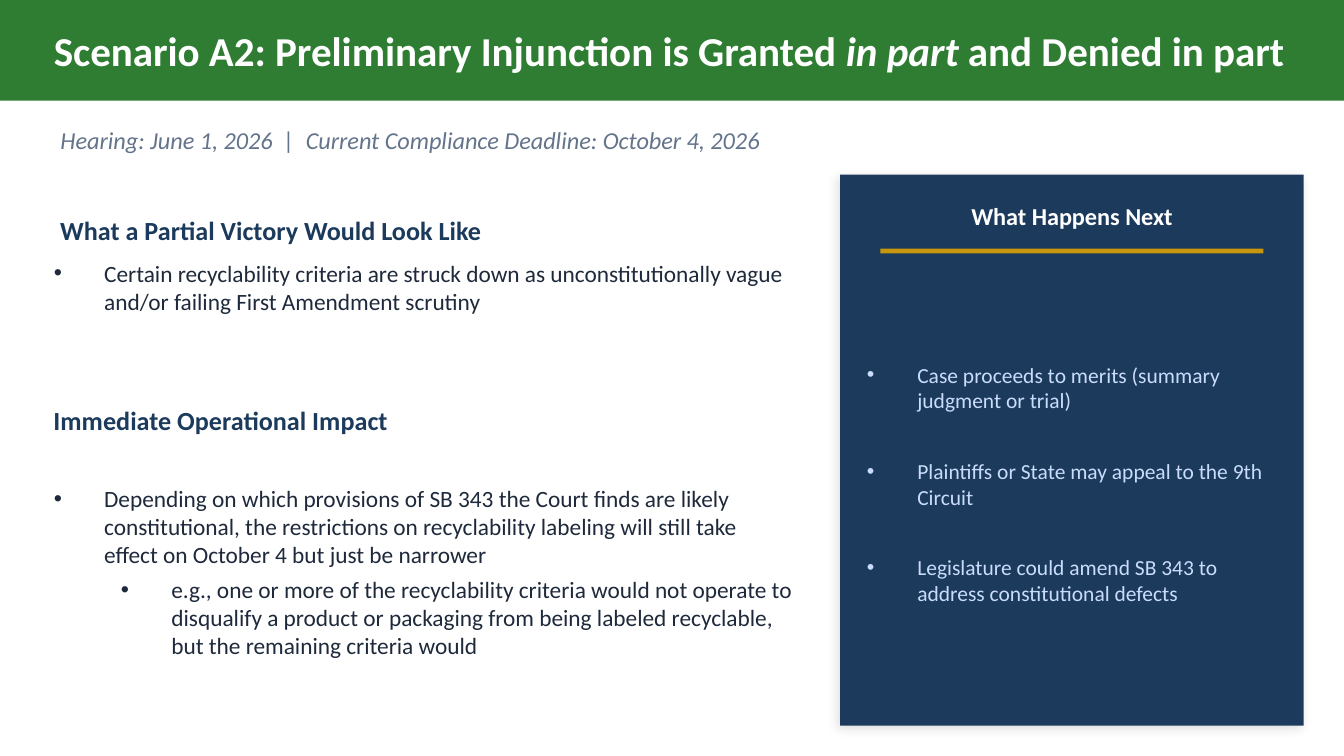
from typing import NamedTuple

from lxml.etree import SubElement
from pptx import Presentation
from pptx.dml.color import RGBColor
from pptx.enum.shapes import MSO_SHAPE
from pptx.enum.text import MSO_ANCHOR, MSO_AUTO_SIZE, PP_ALIGN
from pptx.oxml import parse_xml
from pptx.oxml.ns import nsdecls, qn
from pptx.util import Inches, Pt

CELL = 0.05  # inches; the slide is 200 columns wide
COLUMNS, ROWS = 200, 112.5
HANG = 7.5  # hanging indent of a bullet
SUB_INDENT = 10  # extra indent of each list level


class Theme:
    font = "Calibri"
    green, navy, gold = "2E7D32", "1B3A5C", "C8960C"
    styles = {
        "title": ("FFFFFF", {"size": Pt(22), "bold": True}),
        "dates": ("64748B", {"size": Pt(13), "bold": False, "italic": True}),
        "heading": (navy, {"size": Pt(14), "bold": True}),
        "body": ("1E293B", {"size": Pt(12.5), "bold": False}),
        "panel heading": ("FFFFFF", {"size": Pt(13), "bold": True}),
        "panel body": ("CADCFC", {"size": Pt(11.5), "bold": False}),
    }


class Box(NamedTuple):
    """An area in grid cells."""
    left: float
    top: float
    width: float
    height: float

    def inner(self, left, top, width, height):
        return Box(self.left + left, self.top + top, width, height)

    def emu(self):
        return [Inches(cells * CELL) for cells in self]


def set_all(target, values):
    for name, value in values.items():
        setattr(target, name, value)


def style_font(font, style):
    color, values = Theme.styles[style]
    set_all(font, {"name": Theme.font, **values})
    font.color.rgb = RGBColor.from_string(color)


def bar(slide, box, color):
    shape = slide.shapes.add_shape(MSO_SHAPE.RECTANGLE, *box.emu())
    shape.shadow.inherit = False
    shape.fill.solid()
    shape.fill.fore_color.rgb = RGBColor.from_string(color)
    shape.line.fill.background()
    return shape


def prepare_frame(shape):
    set_all(shape.text_frame, {
        "word_wrap": True, "auto_size": MSO_AUTO_SIZE.NONE,
        "vertical_anchor": MSO_ANCHOR.MIDDLE,
        "margin_left": Inches(0.1), "margin_right": Inches(0.1),
        "margin_top": Inches(0.05), "margin_bottom": Inches(0.05),
    })
    return shape.text_frame


def place(slide, index, box):
    """Move a placeholder to the box and in front of what is already drawn."""
    holder = slide.placeholders[index]
    set_all(holder, dict(zip(("left", "top", "width", "height"), box.emu())))
    holder.element.getparent().append(holder.element)
    return prepare_frame(holder)


def write_line(frame, runs, style, align=PP_ALIGN.LEFT):
    """Fill one paragraph from (text, italic) runs; None keeps the style."""
    line = frame.paragraphs[0]
    set_all(line, {"alignment": align, "space_before": Pt(0), "line_spacing": 1.0})
    for text, italic in runs:
        run = line.add_run()
        run.text = text
        style_font(run.font, style)
        if italic is not None:
            run.font.italic = italic


def label(slide, box, text, style, align=PP_ALIGN.LEFT):
    frame = prepare_frame(slide.shapes.add_textbox(*box.emu()))
    write_line(frame, [(text, None)], style, align)


def bullets(frame, items, style, gap):
    for number, (level, text) in enumerate(items):
        item = frame.paragraphs[0] if number == 0 else frame.add_paragraph()
        set_all(item, {"level": level, "alignment": PP_ALIGN.LEFT, "line_spacing": 1.0,
                       "space_before": Pt(0), "space_after": Pt(gap)})
        properties = item._p.get_or_add_pPr()
        properties.set("marL", str(Inches((HANG + SUB_INDENT * level) * CELL)))
        properties.set("indent", str(-Inches(HANG * CELL)))
        SubElement(properties, qn("a:buChar")).set("char", "•")
        run = item.add_run()
        run.text = text
        style_font(run.font, style)


def banner(slide, box, runs):
    bar(slide, box, Theme.green)
    write_line(place(slide, 0, box.inner(6, 0, box.width - 12, box.height)), runs, "title")


def section(slide, box, heading, items, index, heading_indent, list_top):
    """Heading over a list; returns the frame of the list."""
    label(slide, box.inner(heading_indent, 0, box.width, 7), heading, "heading")
    frame = place(slide, index, box.inner(0, list_top, box.width, box.height - list_top))
    bullets(frame, items, "body", gap=4)
    return frame


def panel(slide, box, heading, items, index):
    card = bar(slide, box, Theme.navy)
    properties = card.element.spPr
    properties.remove(properties.find(qn("a:effectLst")))
    properties.append(parse_xml(
        f'<a:effectLst {nsdecls("a")}><a:outerShdw blurRad="{Pt(6)}" dist="{Pt(2)}" '
        'dir="8100000" algn="bl" rotWithShape="0"><a:srgbClr val="000000">'
        '<a:alpha val="12000"/></a:srgbClr></a:outerShdw></a:effectLst>'))
    text_width = box.width - 4
    label(slide, box.inner(2, 1.6, text_width, 9), heading, "panel heading", PP_ALIGN.CENTER)
    bar(slide, box.inner(6, 11, box.width - 12, 0.7), Theme.gold)
    frame = place(slide, index, box.inner(2, 13, text_width, box.height - 16))
    bullets(frame, items, "panel body", gap=24)


def main():
    deck = Presentation()
    deck.slide_width, deck.slide_height = Inches(COLUMNS * CELL), Inches(ROWS * CELL)
    slide = deck.slides.add_slide(deck.slide_layouts.get_by_name("Comparison"))

    banner(slide, Box(0, 0, COLUMNS, 15), [
        ("Scenario A2: Preliminary Injunction is Granted ", False),
        ("in part ", True),
        ("and Denied in part", False),
    ])
    dates = place(slide, 1, Box(7, 17, COLUMNS - 14, 7.6))
    write_line(dates, [
        ("Hearing: June 1, 2026  |  Current Compliance Deadline: October 4, 2026", None),
    ], "dates")

    section(slide, Box(6, 59, 114, 44.1), "Immediate Operational Impact", [
        (0, "Depending on which provisions of SB 343 the Court finds are likely "
            "constitutional, the restrictions on recyclability labeling will still take "
            "effect on October 4 but just be narrower"),
        (1, "e.g., one or more of the recyclability criteria would not operate to "
            "disqualify a product or packaging from being labeled recyclable, "
            "but the remaining criteria would"),
    ], index=3, heading_indent=0, list_top=8.1)

    panel(slide, Box(125, 26, 69, 82), "What Happens Next", [
        (0, "Case proceeds to merits (summary judgment or trial)"),
        (0, "Plaintiffs or State may appeal to the 9th Circuit"),
        (0, "Legislature could amend SB 343 to address constitutional defects"),
    ], index=4)

    victory = section(slide, Box(6, 30.7, 114, 23.1), "What a Partial Victory Would Look Like", [
        (0, "Certain recyclability criteria are struck down as unconstitutionally vague "
            "and/or failing First Amendment scrutiny"),
    ], index=2, heading_indent=1, list_top=6.1)
    victory.margin_bottom = Inches(0.31)

    deck.save("out.pptx")


if __name__ == "__main__":
    main()
